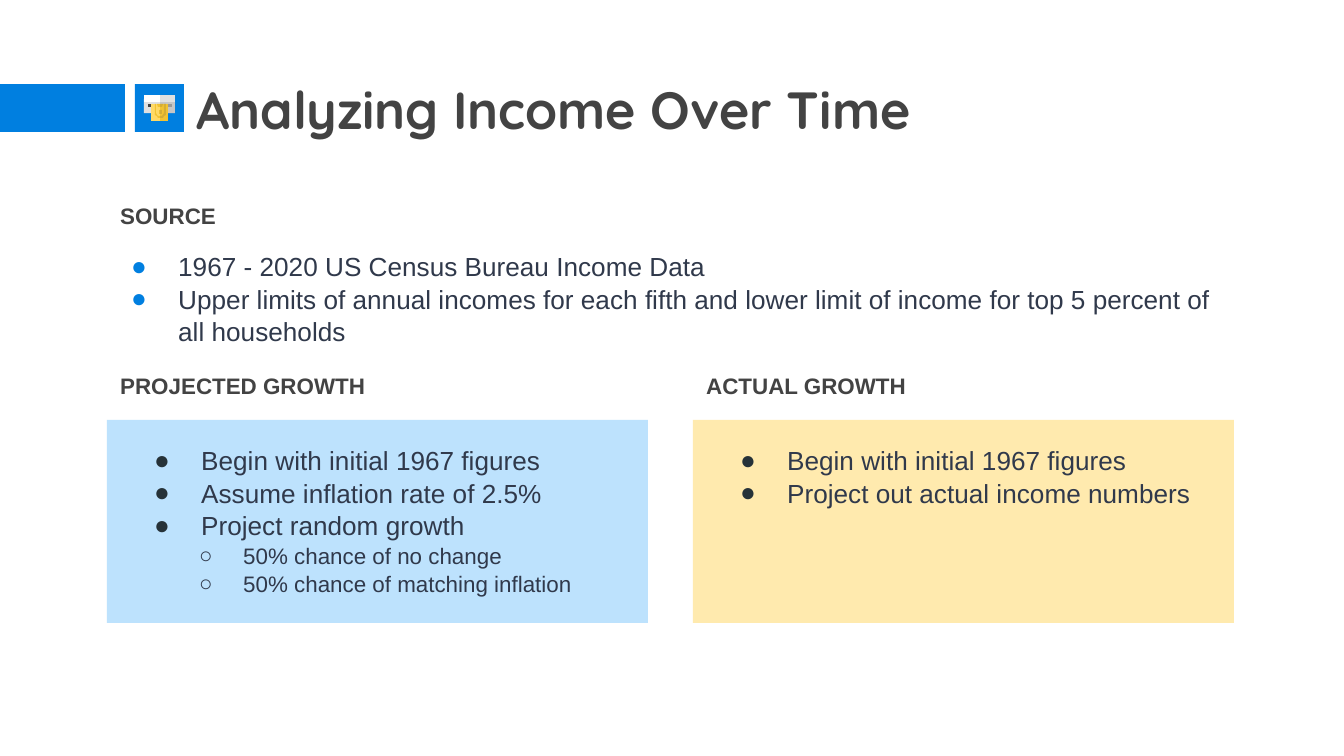
from lxml import etree
from pptx import Presentation
from pptx import util as u
from pptx.dml.color import RGBColor
from pptx.enum import shapes, text
from pptx.oxml.ns import qn

SCALE = 914400 / 134.4  # EMU per px
COLORS = {
    "blue": "007FE0", "heading": "434343", "body": "30394B", "bullet": "263238",
    "projected": "0D94FB", "actual": "FFD966", "machine": "E0E0E0", "white": "FFFFFF",
    "slot_light": "999999", "note": "FFD966", "note_dark": "F1C232",
}


def px(length):
    return u.Emu(round(length * SCALE))


def rgb(name):
    return RGBColor.from_string(COLORS[name])


def paint(shape, color, opacity=100):
    shape.shadow.inherit = False
    shape.line.fill.background()
    shape.fill.solid()
    shape.fill.fore_color.rgb = rgb(color)
    if opacity < 100:
        srgb = shape.fill._xPr.find(qn("a:solidFill"))[0]
        etree.SubElement(srgb, qn("a:alpha"), val=str(opacity * 1000))


def add_block(slide, box, color, opacity=100):
    block = slide.shapes.add_shape(shapes.MSO_SHAPE.RECTANGLE, *map(px, box))
    paint(block, color, opacity)


def add_frame(slide, box, anchor=text.MSO_ANCHOR.TOP):
    frame = slide.shapes.add_textbox(*map(px, box)).text_frame
    frame.word_wrap = True
    frame.vertical_anchor = anchor
    frame.margin_left = frame.margin_right = u.Inches(0.1)
    frame.margin_top = frame.margin_bottom = u.Inches(0.1)
    return frame


def style(paragraph, size, color, font="Arial", bold=False):
    for run in paragraph.runs:
        run.font.size = u.Pt(size)
        run.font.name = font
        run.font.bold = bold
        run.font.color.rgb = rgb(color)


def add_heading(slide, box, wording):
    heading = add_frame(slide, box).paragraphs[0]
    heading.text = wording
    style(heading, 12, "heading", bold=True)


def add_bullets(slide, box, points, bullet_color):
    """Points are (level, wording) pairs."""
    levels = [("●", 67, -47, 14, bullet_color), ("○", 109, -44, 12, "body")]
    frame = add_frame(slide, box)
    for index, (level, wording) in enumerate(points):
        mark, margin, indent, size, mark_color = levels[level]
        point = frame.paragraphs[0] if index == 0 else frame.add_paragraph()
        point.text = wording
        point.level = level
        point.line_spacing = 1.04
        props = point._p.get_or_add_pPr()
        props.set("marL", str(px(margin)))
        props.set("indent", str(px(indent)))
        bullet = etree.SubElement(props, qn("a:buClr"))
        etree.SubElement(bullet, qn("a:srgbClr"), val=COLORS[mark_color])
        etree.SubElement(props, qn("a:buFont"), typeface="Arial")
        etree.SubElement(props, qn("a:buChar"), char=mark)
        style(point, size, "body")


def corners(left, top, right, bottom):
    return [(left, top), (right, top), (right, bottom), (left, bottom)]


def draw_cash_machine(slide, left, top):
    half = 16  # the right half is drawn darker
    parts = [
        ([(0, 4), (31, 4), (31, 18), (23, 18), (23, 12), (9, 12), (9, 18), (0, 18)],
         "machine", 100),
        ([(half, 4), (31, 4), (31, 18), (23, 18), (23, 12), (half, 12)], "heading", 16),
        (corners(0, 0, 31, 7), "white", 100),
        (corners(half, 0, 31, 7), "heading", 16),
        (corners(4, 9, 28, 12), "heading", 100),
        (corners(half, 9, 28, 12), "slot_light", 100),
        (corners(7, 9, 24, 26), "note", 100),
        (corners(15, 15, 18, 19), "note_dark", 100),
        (corners(half, 9, 24, 26), "note_dark", 100),
        ([(11, 9), (11, 20), (13, 21), (14, 23), (19, 23), (20, 21), (22, 20), (22, 9),
          (20, 9), (20, 18), (18, 21), (14, 21), (12, 18), (12, 9)], "note_dark", 100),
        ([(13, 9), (14, 12), (18, 12), (19, 9)], "note_dark", 100),
        ([(20, 9), (20, 18), (18, 21), (half, 21), (half, 23), (19, 23), (20, 21),
          (22, 20), (22, 9)], "heading", 16),
        (corners(half, 15, 18, 19), "heading", 16),
        ([(half, 9), (half, 12), (18, 12), (19, 9)], "heading", 16),
    ]
    for outline, color, opacity in parts:
        builder = slide.shapes.build_freeform(*outline[0], scale=SCALE)
        builder.add_line_segments(outline[1:], close=True)
        paint(builder.convert_to_shape(px(left), px(top)), color, opacity)


def add_title_band(slide, left, top, wording):
    add_block(slide, (left, top, 125, 48), "blue")
    add_block(slide, (left + 135, top, 49, 48), "blue")
    draw_cash_machine(slide, left + 144, top + 11)
    title = add_frame(slide, (left + 183, top - 7, 911, 63),
                      text.MSO_ANCHOR.MIDDLE).paragraphs[0]
    title.text = wording
    style(title, 28, "heading", "Quicksand", bold=True)


def add_source(slide, left, top, points):
    add_heading(slide, (left, top, 387, 71), "SOURCE")
    add_bullets(slide, (left - 9, top + 47, 1136, 89), points, "blue")


def add_growth_panel(slide, left, top, heading, points, color, opacity):
    add_block(slide, (left, top + 61, 541, 203), color, opacity)
    add_heading(slide, (left, top, 387, 71), heading)
    add_bullets(slide, (left + 14, top + 71, 512, 185), points, "bullet")


def main():
    deck = Presentation()
    deck.slide_width, deck.slide_height = px(1344), px(756)
    slide = deck.slides.add_slide(deck.slide_layouts[6])

    add_title_band(slide, 0, 84, "Analyzing Income Over Time")
    add_source(slide, 107, 189, [
        (0, "1967 - 2020 US Census Bureau Income Data"),
        (0, "Upper limits of annual incomes for each fifth and lower limit of income "
            "for top 5 percent of all households"),
    ])
    start = (0, "Begin with initial 1967 figures")
    panels = [
        ("PROJECTED GROWTH", [
            start,
            (0, "Assume inflation rate of 2.5%"),
            (0, "Project random growth"),
            (1, "50% chance of no change"),
            (1, "50% chance of matching inflation"),
        ], "projected", 27),
        ("ACTUAL GROWTH", [start, (0, "Project out actual income numbers")], "actual", 53),
    ]
    for column, panel in enumerate(panels):
        add_growth_panel(slide, 107 + 586 * column, 359, *panel)

    deck.save("out.pptx")


if __name__ == "__main__":
    main()
